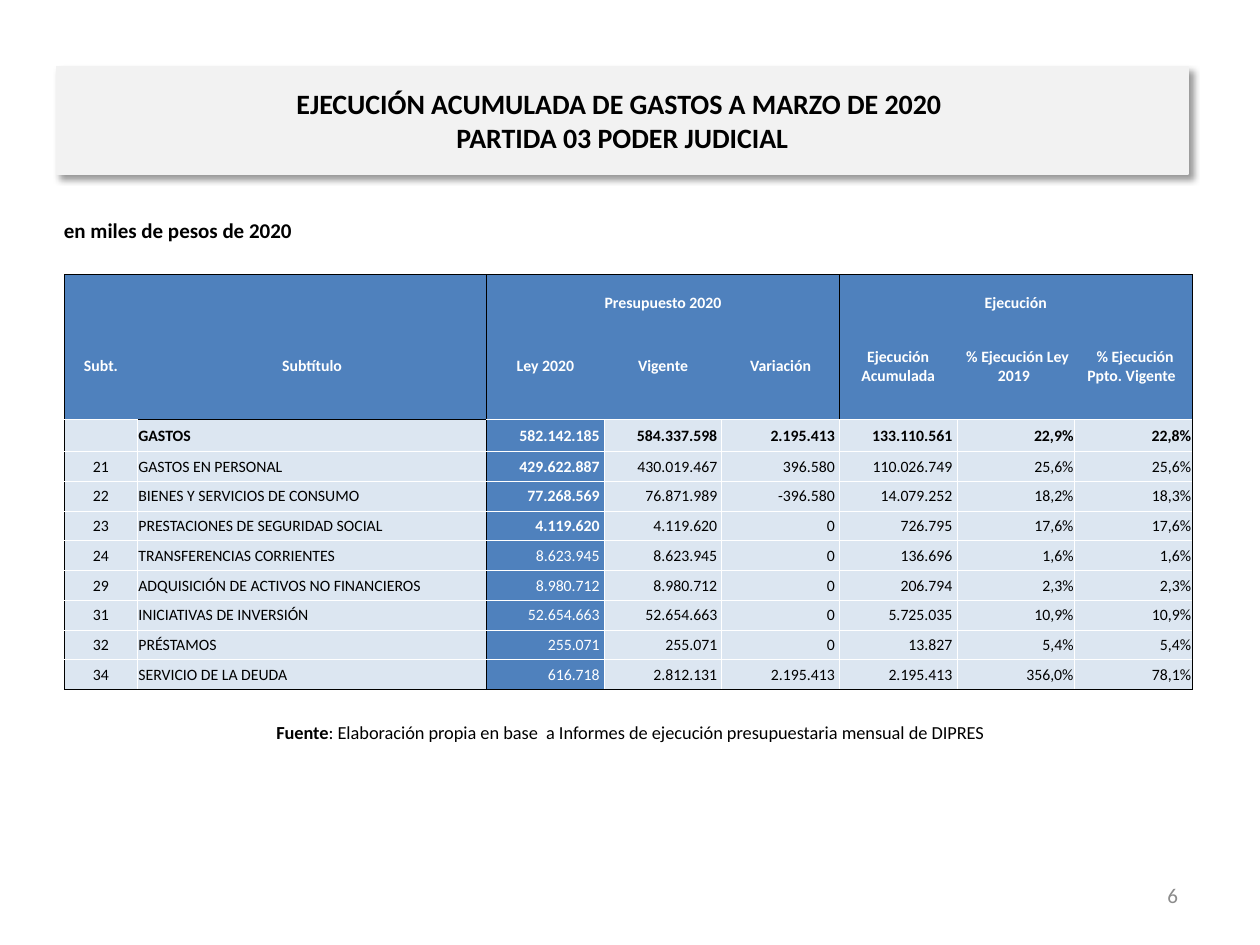
from lxml import etree
from pptx import Presentation
from pptx.dml.color import RGBColor
from pptx.enum.text import MSO_ANCHOR, MSO_AUTO_SIZE, PP_ALIGN
from pptx.oxml import parse_xml
from pptx.oxml.ns import nsdecls, qn
from pptx.util import Cm, Pt

LEFT, CENTER, RIGHT = PP_ALIGN.LEFT, PP_ALIGN.CENTER, PP_ALIGN.RIGHT
JUSTIFY = PP_ALIGN.JUSTIFY
TOP, MIDDLE, BOTTOM = MSO_ANCHOR.TOP, MSO_ANCHOR.MIDDLE, MSO_ANCHOR.BOTTOM
NO_AUTOFIT = MSO_AUTO_SIZE.NONE

BLACK, WHITE, GRAY = "000000", "FFFFFF", "8C8C8C"
BLUE, PALE_BLUE, PANEL = "4F81BD", "DCE6F1", "F2F2F2"
PLAIN_TABLE_STYLE = "{2D5ABB26-0587-4C30-8999-92F81FD0307C}"

COLUMN_WIDTHS = [1.47, 7.04] + [2.37] * 6
ROW_HEIGHTS = [0.76, 2.16, 0.64] + [0.6] * 8
HEADER_ROWS = 2
LAW_COLUMN = 2
GROUP_STARTS, GROUP_ENDS = (0, 2, 5), (1, 4, 7)
BOLD_LAW_ROWS = range(2, 6)

ROWS = [
    ["", "", "Presupuesto 2020", "", "", "Ejecución", "", ""],
    ["Subt.", "Subtítulo", "Ley 2020", "Vigente", "Variación",
     "Ejecución Acumulada", " % Ejecución Ley 2019 ", " % Ejecución Ppto. Vigente "],
    ["", "GASTOS", "582.142.185 ", "584.337.598 ", "2.195.413 ", "133.110.561 ", "22,9%", "22,8%"],
    ["21", "GASTOS EN PERSONAL", "429.622.887 ", "430.019.467 ", "396.580 ", "110.026.749 ",
     "25,6%", "25,6%"],
    ["22", "BIENES Y SERVICIOS DE CONSUMO", "77.268.569 ", "76.871.989 ", "-396.580 ",
     "14.079.252 ", "18,2%", "18,3%"],
    ["23", "PRESTACIONES DE SEGURIDAD SOCIAL", "4.119.620 ", "4.119.620 ", "0 ", "726.795 ",
     "17,6%", "17,6%"],
    ["24", "TRANSFERENCIAS CORRIENTES", "8.623.945 ", "8.623.945 ", "0 ", "136.696 ",
     "1,6%", "1,6%"],
    ["29", "ADQUISICIÓN DE ACTIVOS NO FINANCIEROS", "8.980.712 ", "8.980.712 ", "0 ",
     "206.794 ", "2,3%", "2,3%"],
    ["31", "INICIATIVAS DE INVERSIÓN", "52.654.663 ", "52.654.663 ", "0 ", "5.725.035 ",
     "10,9%", "10,9%"],
    ["32", "PRÉSTAMOS", "255.071 ", "255.071 ", "0 ", "13.827 ", "5,4%", "5,4%"],
    ["34", "SERVICIO DE LA DEUDA", "616.718 ", "2.812.131 ", "2.195.413 ", "2.195.413 ",
     "356,0%", "78,1%"],
]


def color(value):
    return RGBColor.from_string(value)


def cell_borders(row, column, last_column):
    """Colours of the left, right, top and bottom edges; None is no line."""
    header = row < HEADER_ROWS
    inner = None if header else WHITE
    left = BLACK if column in (GROUP_STARTS if header else (0, 2)) else inner
    right = BLACK if last_column in (GROUP_ENDS if header else (1, 7)) else inner
    top = BLACK if row == 0 or (row, column) == (HEADER_ROWS, 1) else inner
    bottom = inner
    if row == len(ROWS) - 1 or (row, column) == (HEADER_ROWS - 1, 1):
        bottom = BLACK
    elif row == HEADER_ROWS - 1:
        bottom = WHITE
    return {"L": left, "R": right, "T": top, "B": bottom}


class SlideBuilder:
    font_name = "Calibri"

    def __init__(self, presentation):
        self.slide = presentation.slides.add_slide(presentation.slide_layouts[5])

    def format_paragraph(self, paragraph, size, text_color, bold=None, align=LEFT):
        paragraph.alignment = align
        font = paragraph.font
        font.name, font.size, font.bold = self.font_name, Pt(size), bold
        font.color.rgb = color(text_color)

    def title(self, text, left, top, width, height):
        shape = self.slide.shapes.title
        shape.left, shape.top, shape.width, shape.height = map(Cm, (left, top, width, height))
        shape.fill.solid()
        shape.fill.fore_color.rgb = color(PANEL)
        shape.line.color.rgb = color(PANEL)
        shape.line.width = Pt(0.75)
        shape.element.spPr.append(parse_xml(
            f'<a:effectLst {nsdecls("a")}><a:outerShdw blurRad="{Pt(4)}" dist="{Pt(3)}"'
            ' dir="2700000" algn="tl" rotWithShape="0"><a:srgbClr val="000000">'
            '<a:alpha val="40000"/></a:srgbClr></a:outerShdw></a:effectLst>'))
        frame = shape.text_frame
        frame.text = text
        frame.auto_size = NO_AUTOFIT
        frame.vertical_anchor = MIDDLE
        self.format_paragraph(frame.paragraphs[0], 16, BLACK, True, CENTER)

    def text(self, runs, left, top, width, height, size,
             text_color=BLACK, align=LEFT, anchor=MIDDLE):
        """Add a text box; runs is a list of (text, bold) pairs."""
        shape = self.slide.shapes.add_textbox(*map(Cm, (left, top, width, height)))
        frame = shape.text_frame
        frame.word_wrap = True
        frame.vertical_anchor = anchor
        paragraph = frame.paragraphs[0]
        self.format_paragraph(paragraph, size, text_color, align=align)
        for text, bold in runs:
            run = paragraph.add_run()
            run.text, run.font.bold = text, bold

    def border(self, cell, side, line_color):
        line = etree.SubElement(cell._tc.get_or_add_tcPr(), qn(f"a:ln{side}"), w=str(Pt(0.5)))
        if line_color is None:
            etree.SubElement(line, qn("a:noFill"))
        else:
            fill = etree.SubElement(line, qn("a:solidFill"))
            etree.SubElement(fill, qn("a:srgbClr"), val=line_color)

    def cell(self, cell, text, row, column):
        header = row < HEADER_ROWS
        blue = header or column == LAW_COLUMN
        last_column = column + (cell.span_width - 1 if cell.is_merge_origin else 0)
        for side, line_color in cell_borders(row, column, last_column).items():
            self.border(cell, side, line_color)
        cell.fill.solid()
        cell.fill.fore_color.rgb = color(BLUE if blue else PALE_BLUE)
        cell.margin_left = cell.margin_right = cell.margin_top = Cm(0.02)
        cell.margin_bottom = 0
        cell.vertical_anchor = BOTTOM if row == 0 else MIDDLE
        cell.text = text
        if header or column == 0:
            align = CENTER
        elif column == 1:
            align = LEFT if row == HEADER_ROWS else JUSTIFY
        else:
            align = RIGHT
        bold = row <= HEADER_ROWS or (column == LAW_COLUMN and row in BOLD_LAW_ROWS)
        self.format_paragraph(cell.text_frame.paragraphs[0], 9,
                              WHITE if blue else BLACK, bold, align)

    def table(self, left, top):
        size = sum(COLUMN_WIDTHS), sum(ROW_HEIGHTS)
        frame = self.slide.shapes.add_table(
            len(ROWS), len(COLUMN_WIDTHS), *map(Cm, (left, top, *size)))
        table = frame.table
        table.first_row = table.horz_banding = False
        table._tbl.tblPr.find(qn("a:tableStyleId")).text = PLAIN_TABLE_STYLE
        for column, width in zip(table.columns, COLUMN_WIDTHS):
            column.width = Cm(width)
        for row, height in zip(table.rows, ROW_HEIGHTS):
            row.height = Cm(height)
        # Group headings span three columns each
        for start, end in list(zip(GROUP_STARTS, GROUP_ENDS))[1:]:
            table.cell(0, start).merge(table.cell(0, end))
        for row, texts in enumerate(ROWS):
            for column, text in enumerate(texts):
                self.cell(table.cell(row, column), text, row, column)


def main():
    presentation = Presentation()
    presentation.slide_width, presentation.slide_height = Cm(25.4), Cm(19.05)
    builder = SlideBuilder(presentation)

    # Heading and unit
    builder.title("EJECUCIÓN ACUMULADA DE GASTOS A MARZO DE 2020 \vPARTIDA 03 PODER JUDICIAL",
                  1.14, 1.35, 22.81, 2.16)
    builder.text([("en miles de pesos de 2020", True)], 1.04, 4.27, 22.86, 1.27, 12, anchor=TOP)

    # Budget table
    builder.table(1.3, 5.54)

    # Source and page number
    builder.text([("Fuente", True),
                  (": Elaboración propia en base  a Informes de ejecución presupuestaria"
                   " mensual de DIPRES", False)],
                 1.04, 14.25, 23.34, 1.02, 10.5, align=CENTER)
    builder.text([("6", False)], 18.08, 17.53, 5.92, 1.02, 12, GRAY, RIGHT)

    presentation.save("out.pptx")


if __name__ == "__main__":
    main()
